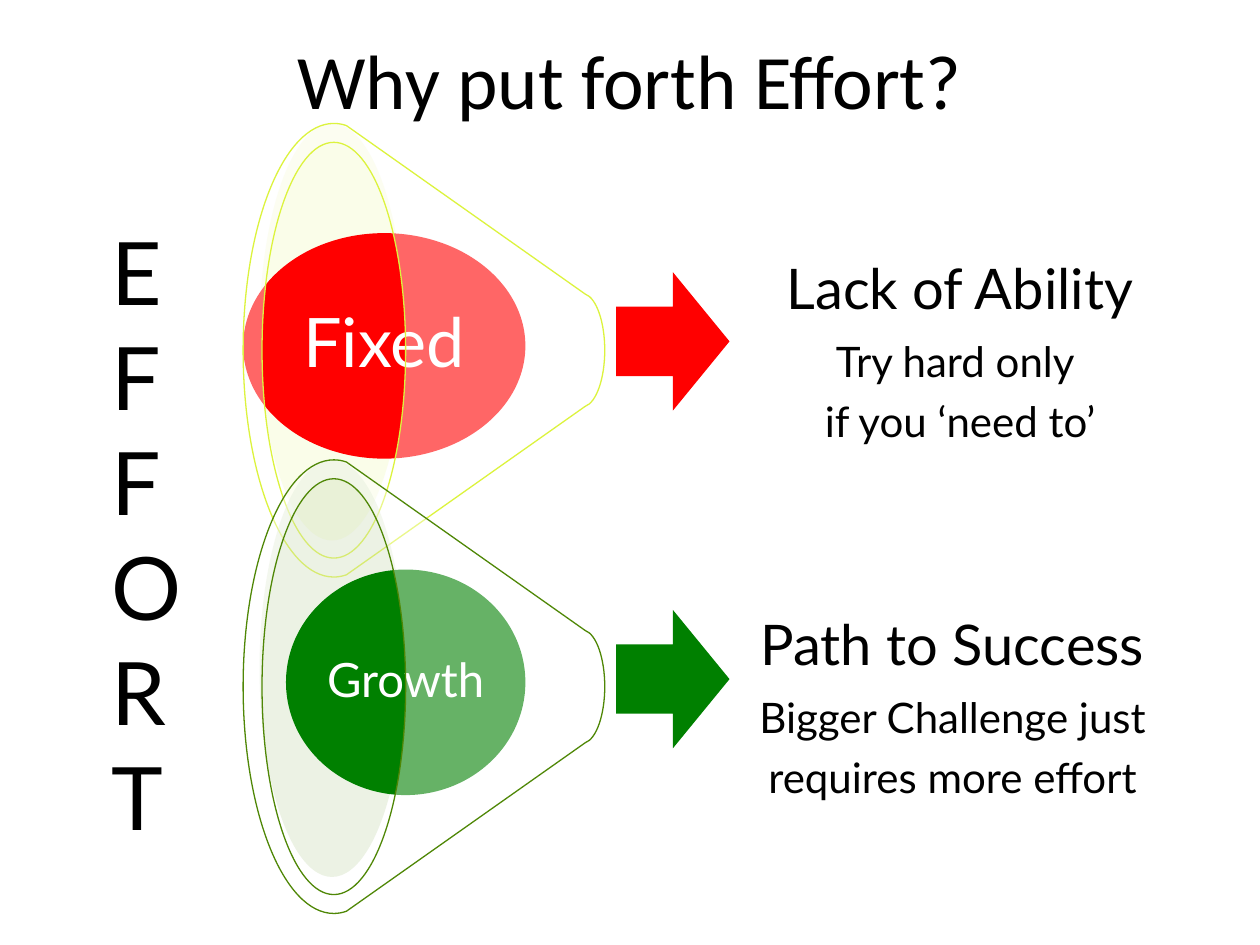
import math
from dataclasses import dataclass

import pptx
import pptx.dml.color
import pptx.enum.shapes
import pptx.enum.text
import pptx.oxml.ns
import pptx.util
from lxml import etree

Inches = pptx.util.Inches
Pt = pptx.util.Pt
Shape = pptx.enum.shapes.MSO_SHAPE
Align = pptx.enum.text.PP_ALIGN
Anchor = pptx.enum.text.MSO_ANCHOR
qn = pptx.oxml.ns.qn


@dataclass(frozen=True)
class Theme:
    title_font: str = "Calibri"
    body_font: str = "Lato"
    text: str = "000000"
    light: str = "FFFFFF"
    title_size: int = 44
    letter_size: int = 50
    heading_size: int = 32
    detail_size: int = 24
    outline: float = 0.75
    opacity: int = 40


@dataclass(frozen=True)
class Mindset:
    name: str
    name_size: int
    name_margin: float
    ball_left: float
    ball_width: float
    color: str
    tint: str
    edge: str
    lines: tuple
    text_left: float
    text_drop: float
    text_width: float
    arrow_drop: float


THEME = Theme()
FIXED = Mindset("Fixed", 39, 0.05, 0, 2.24, "FF0000", "F4FBCA", "DCF33D",
                ("Lack of Ability", "Try hard only ", "if you ‘need to’"),
                3.61, 1.19, 4.16, 1.18)
GROWTH = Mindset("Growth", 27, 0.03, 0.34, 1.9, "008000", "D0DFBD", "4F8706",
                 ("Path to Success", "Bigger Challenge just", "requires more effort"),
                 3.48, 1.34, 4.3, 1.19)


def rgb(value):
    return pptx.dml.color.RGBColor.from_string(value)


def paint(shape, color, opacity=100):
    shape.shadow.inherit = False
    shape.fill.solid()
    shape.fill.fore_color.rgb = rgb(color)
    shape.line.fill.background()
    if opacity < 100:
        node = next(shape.element.spPr.iter(qn("a:srgbClr")))
        etree.SubElement(node, qn("a:alpha")).set("val", str(opacity * 1000))


def add_filled(page, kind, left, top, width, height, color, opacity=100):
    shape = page.shapes.add_shape(
        kind, Inches(left), Inches(top), Inches(width), Inches(height))
    paint(shape, color, opacity)
    return shape


def style(para, font, size, color, align):
    para.alignment = align
    for span in para.runs:
        span.font.name = font
        span.font.size = Pt(size)
        span.font.color.rgb = rgb(color)


def set_margins(frame, margin):
    frame.margin_left = frame.margin_right = Inches(margin)
    frame.margin_top = frame.margin_bottom = Inches(margin)


def arc(center_x, center_y, radius_x, radius_y, degrees):
    def place(x, y):
        return Inches(center_x + radius_x * x), Inches(center_y + radius_y * y)

    angles = [math.radians(degree) for degree in degrees]
    points = [place(math.cos(angles[0]), math.sin(angles[0]))]
    for start, end in zip(angles, angles[1:]):
        pull = 4 / 3 * math.tan((end - start) / 4)
        points += [
            place(math.cos(start) - pull * math.sin(start),
                  math.sin(start) + pull * math.cos(start)),
            place(math.cos(end) + pull * math.sin(end),
                  math.sin(end) - pull * math.cos(end)),
            place(math.cos(end), math.sin(end))]
    return points


def bend(shape, straight):
    steps = list(shape.element.iter(qn("a:lnTo")))
    del steps[straight]
    for first, second, third in zip(steps[::3], steps[1::3], steps[2::3]):
        curve = etree.Element(qn("a:cubicBezTo"))
        first.addprevious(curve)
        for step in (first, second, third):
            curve.append(step[0])
            step.getparent().remove(step)


def add_funnel(page, left, top, edge):
    middle = top + 1.8
    mouth_x = left + 0.72
    mouth = arc(mouth_x, middle, 0.72, 1.8, (82, 90, 180, 270, 278))
    spout = arc(left + 2.69, middle, 0.18, 0.45, (-82, 0, 82))
    opening = arc(mouth_x, middle, 0.57, 1.65, (90, 0, -90, -180, -270))
    builder = page.shapes.build_freeform(*mouth[0], scale=1.0)
    builder.add_line_segments(mouth[1:] + spout, close=True)
    builder.move_to(*opening[0])
    builder.add_line_segments(opening[1:], close=True)
    funnel = builder.convert_to_shape()
    bend(funnel, straight=len(mouth) - 1)
    paint(funnel, THEME.light, THEME.opacity)
    funnel.line.color.rgb = rgb(edge)
    funnel.line.width = Pt(THEME.outline)


def add_outcome(page, mindset, left, top, width, height):
    box = page.shapes.add_textbox(
        Inches(left), Inches(top), Inches(width), Inches(height))
    frame = box.text_frame
    frame.word_wrap = True
    frame.vertical_anchor = Anchor.MIDDLE
    set_margins(frame, 0.25)
    frame.text = "\n".join(mindset.lines)
    sizes = (THEME.heading_size, THEME.detail_size, THEME.detail_size)
    for para, size, before in zip(frame.paragraphs, sizes, (0, 11.2, 8.4)):
        style(para, THEME.body_font, size, THEME.text, Align.CENTER)
        para.line_spacing = 0.9
        para.space_before = Pt(before)
    frame.paragraphs[-1].space_after = Pt(8.4)


def add_mindset(page, mindset, left, top):
    add_filled(page, Shape.OVAL, left + 0.13, top, 1.15, 3.31,
               mindset.tint, THEME.opacity)
    add_filled(page, Shape.RIGHT_ARROW, left + 2.96, top + mindset.arrow_drop,
               0.9, 1.1, mindset.color)
    add_outcome(page, mindset, left + mindset.text_left, top + mindset.text_drop,
                mindset.text_width, 1.28)
    ball = add_filled(page, Shape.OVAL, left + mindset.ball_left, top + 0.87,
                      mindset.ball_width, 1.79, mindset.color)
    frame = ball.text_frame
    frame.word_wrap = True
    frame.vertical_anchor = Anchor.MIDDLE
    set_margins(frame, mindset.name_margin)
    frame.text = mindset.name
    para = frame.paragraphs[0]
    style(para, THEME.body_font, mindset.name_size, THEME.light, Align.CENTER)
    para.line_spacing = 0.9
    para.space_after = Pt(mindset.name_size * 0.35)
    add_funnel(page, left, top, mindset.edge)


def add_title(page, text, left, top, width, height):
    title = page.shapes.title
    title.left, title.top = Inches(left), Inches(top)
    title.width, title.height = Inches(width), Inches(height)
    title.text_frame.text = text
    title.text_frame.vertical_anchor = Anchor.MIDDLE
    style(title.text_frame.paragraphs[0], THEME.title_font, THEME.title_size,
          THEME.text, Align.CENTER)


def add_letters(page, word, left, top, width, height):
    box = page.shapes.add_textbox(
        Inches(left), Inches(top), Inches(width), Inches(height))
    box.text_frame.word_wrap = True
    box.text_frame.text = "\n".join(word)
    for para in box.text_frame.paragraphs:
        style(para, THEME.body_font, THEME.letter_size, THEME.text, Align.LEFT)


def main():
    deck = pptx.Presentation()
    deck.slide_width, deck.slide_height = Inches(10), Inches(7.5)
    page = deck.slides.add_slide(deck.slide_layouts[5])
    add_title(page, "Why put forth Effort?", 0.5, 0, 9, 1.25)
    for index, mindset in enumerate((FIXED, GROWTH)):
        add_mindset(page, mindset, 1.93, 0.98 + index * 2.67)
    add_letters(page, "EFFORT", 0.79, 1.68, 0.71, 5.15)
    deck.save("out.pptx")


if __name__ == "__main__":
    main()
